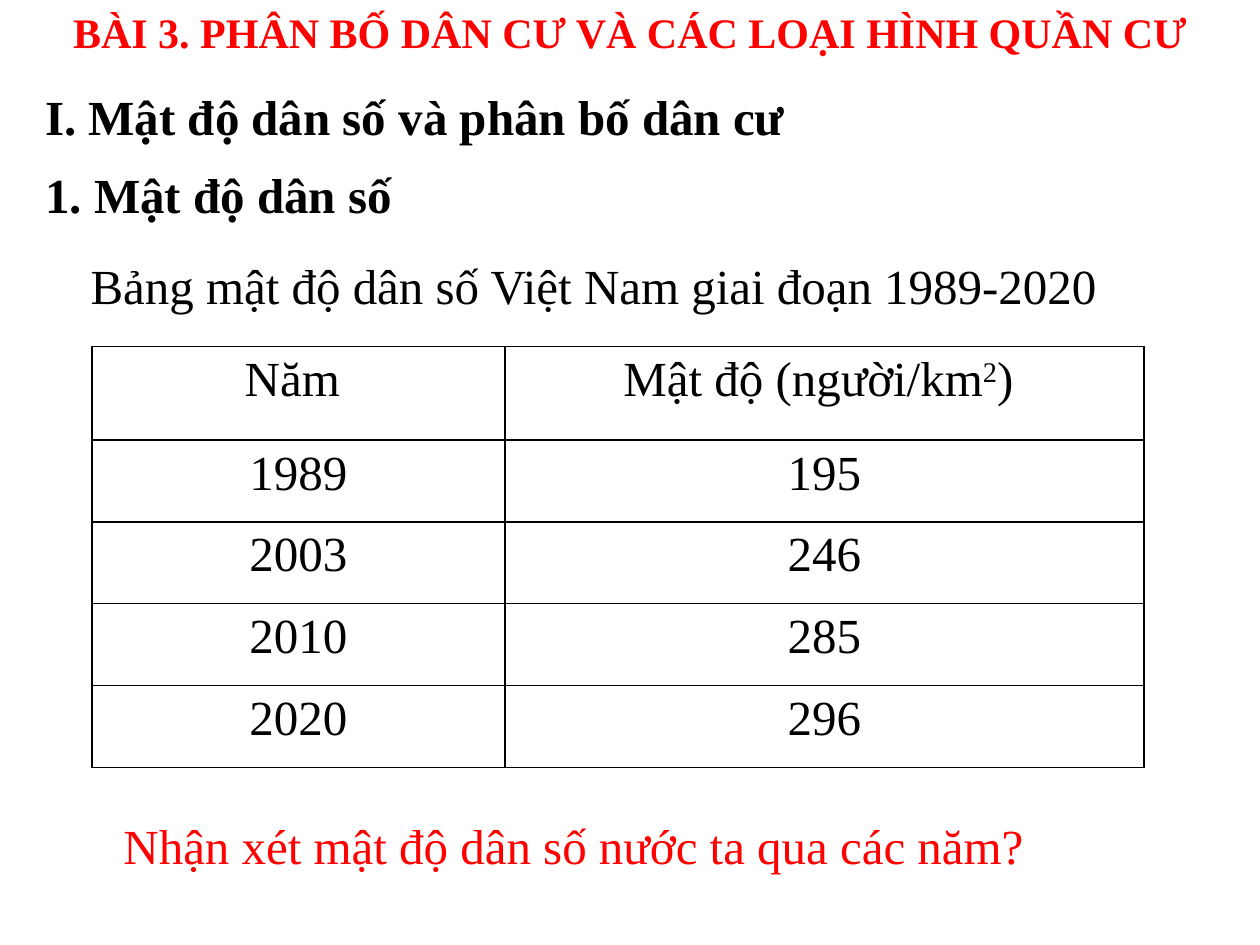
from dataclasses import dataclass
from lxml import etree
from pptx import Presentation
from pptx.dml.color import RGBColor
from pptx.enum.text import MSO_AUTO_SIZE, PP_ALIGN
from pptx.oxml.ns import qn
from pptx.util import Cm, Pt

LEFT, MID = PP_ALIGN.LEFT, PP_ALIGN.CENTER
GROW = MSO_AUTO_SIZE.SHAPE_TO_FIT_TEXT


@dataclass
class Theme:
    font: str = "Times New Roman"
    ink: RGBColor = RGBColor(0, 0, 0)
    red: RGBColor = RGBColor(255, 0, 0)
    head: Pt = Pt(24)
    body: Pt = Pt(28)
    line: Pt = Pt(1)


theme = Theme()


def style(para, size, color, bold, align):
    para.alignment = align
    for run in para.runs:
        font = run.font
        font.name, font.size, font.bold = theme.font, size, bold
        font.color.rgb = color


def border(cell):
    props = cell._tc.get_or_add_tcPr()
    for i, side in enumerate(("lnL", "lnR", "lnT", "lnB")):
        line = etree.Element(qn(f"a:{side}"), w=str(theme.line))
        fill = etree.SubElement(line, qn("a:solidFill"))
        etree.SubElement(fill, qn("a:srgbClr"), val=str(theme.ink))
        props.insert(i, line)


deck = Presentation()
deck.slide_width, deck.slide_height = Cm(25.4), Cm(19.05)
slide = deck.slides.add_slide(deck.slide_layouts[6])

texts = [
    ("I. Mật độ dân số và phân bố dân cư", (0.66, 1.02, 15.6, 1.83),
     theme.body, theme.ink, True, LEFT, False, 1.5),
    ("BÀI 3. PHÂN BỐ DÂN CƯ VÀ CÁC LOẠI HÌNH QUẦN CƯ", (1.17, 0, 23.06, 1.27),
     theme.head, theme.red, True, MID, True, 1.0),
    ("1. Mật độ dân số", (0.66, 2.59, 7.59, 1.83),
     theme.body, theme.ink, True, LEFT, False, 1.5),
    ("Bảng mật độ dân số Việt Nam giai đoạn 1989-2020", (1.17, 5.03, 21.59, 1.45),
     theme.body, theme.ink, False, MID, True, 1.0),
    ("Nhận xét mật độ dân số nước ta qua các năm?", (2.24, 16.31, 20.52, 1.45),
     theme.body, theme.red, False, LEFT, True, 1.0),
]
for text, place, size, color, bold, align, wrap, space in texts:
    frame = slide.shapes.add_textbox(*map(Cm, place)).text_frame
    frame.text = text
    frame.word_wrap = wrap
    frame.auto_size = GROW
    para = frame.paragraphs[0]
    para.line_spacing = space
    style(para, size, color, bold, align)

rows = [
    (["Năm "], ["Mật độ (người/km", "2", ") "]),
    (["1989"], ["195"]),
    (["2003"], ["246"]),
    (["2010"], ["285"]),
    (["2020"], ["296"]),
]
table = slide.shapes.add_table(
    len(rows), 2, Cm(1.85), Cm(6.99), Cm(21.21), Cm(8.48)).table
table.first_row = table.horz_banding = False
for col, width in zip(table.columns, (8.33, 12.88)):
    col.width = Cm(width)
for r, row in enumerate(rows):
    table.rows[r].height = Cm(1.65 if r else 1.88)
    for c, parts in enumerate(row):
        cell = table.cell(r, c)
        cell.fill.background()
        border(cell)
        para = cell.text_frame.paragraphs[0]
        for part in parts:
            para.add_run().text = part
        style(para, theme.body, theme.ink, False, MID)

power = table.cell(0, 1).text_frame.paragraphs[0].runs[1]
power._r.get_or_add_rPr().set("baseline", "30000")

deck.save("out.pptx")
